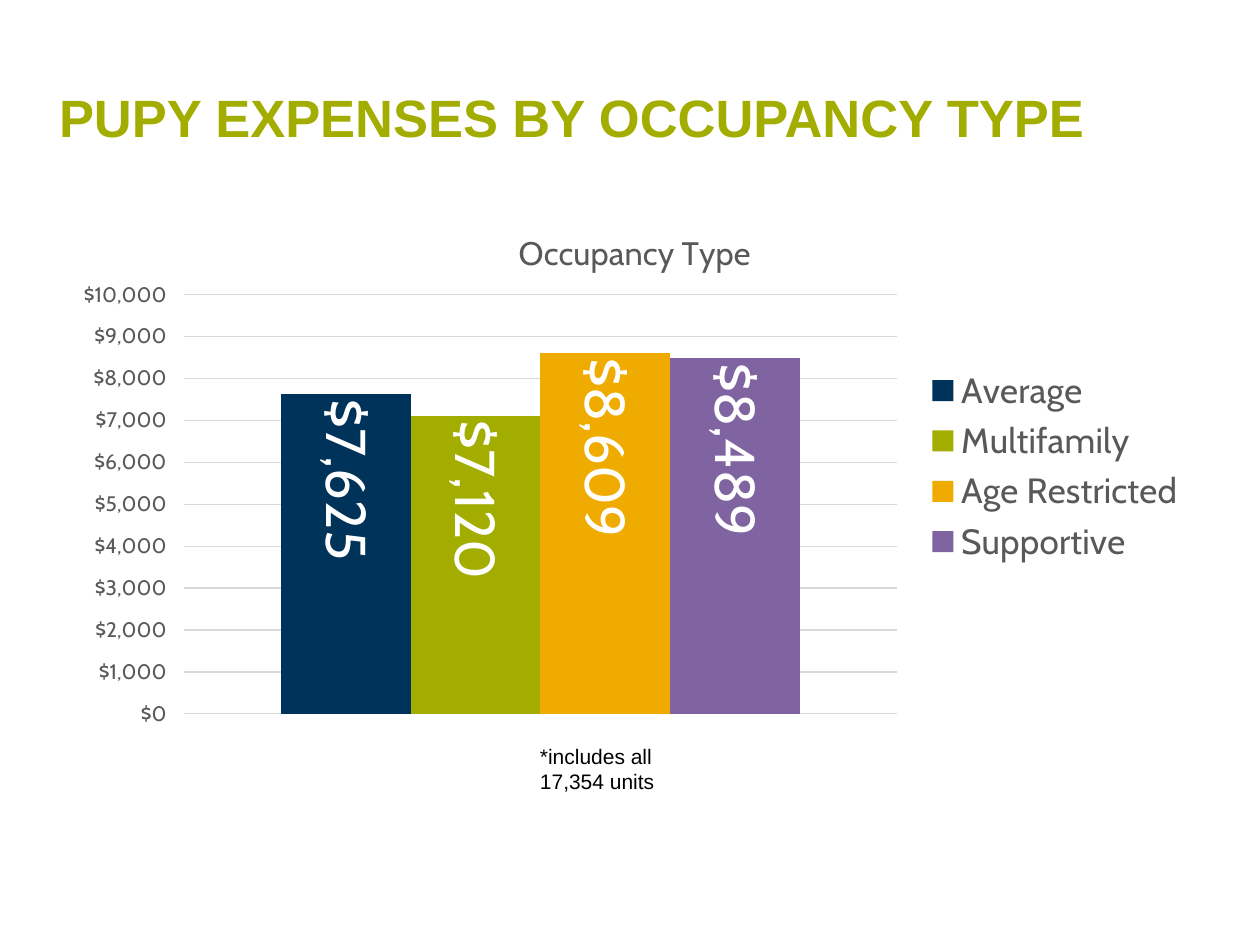
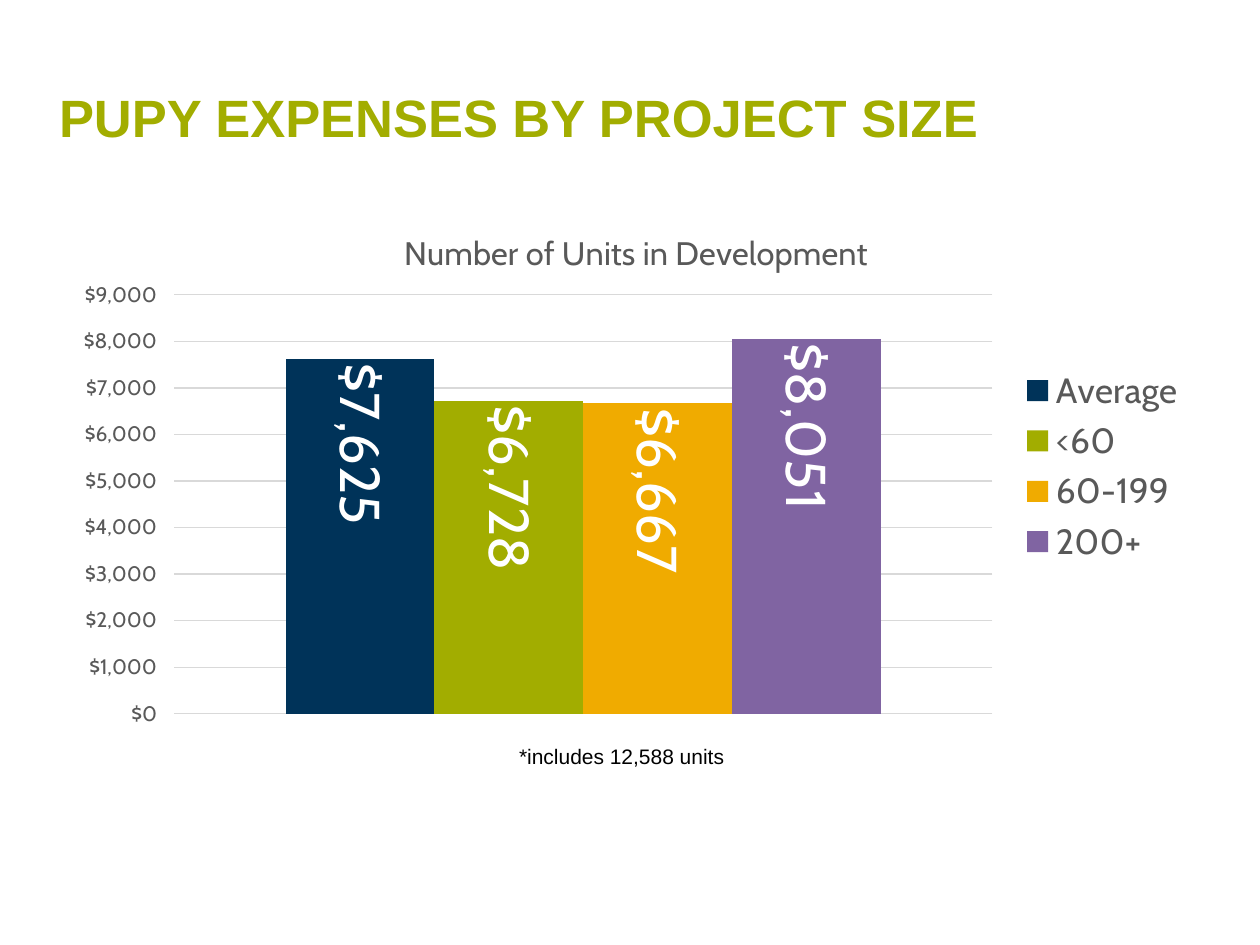
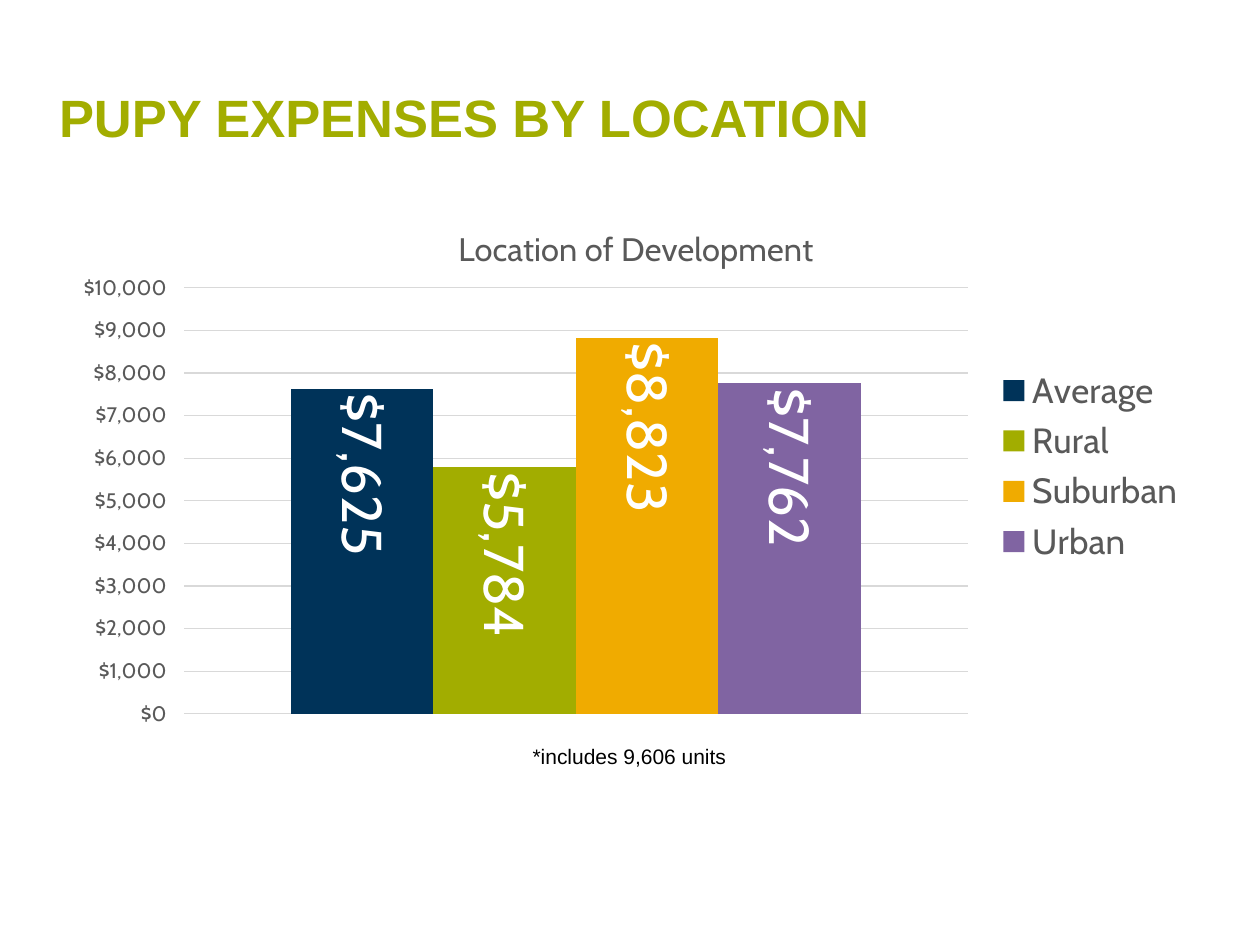
import pptx
import pptx.chart.data
import pptx.dml.color
import pptx.enum.chart
import pptx.enum.text
import pptx.oxml
import pptx.oxml.ns
import pptx.util
from lxml import etree

Pt = pptx.util.Pt
qn = pptx.oxml.ns.qn

GREEN, GRAY, GRID = "A2AD00", "595959", "D9D9D9"
BLACK, WHITE = "000000", "FFFFFF"
SERIES_COLORS = ["003359", GREEN, "F0AB00", "8064A2"]
TEXT_FONT, CHART_FONT = "Arial", "Cabin"
DOLLARS = '"$"#,##0_);[Red]\\("$"#,##0\\)'

# Left, top, width and height in points
TITLE_BOX = (26.64, 21.6, 658.8, 90)
CHART_BOX = (35.28, 111.6, 650.16, 309.6)
PLOT_BOTTOM = 408
NOTE_TOP = 421.2

# heading: left, top; plot: left, top, right; note_box: left, width, height
SLIDES = [
    dict(title="PUPY EXPENSES BY OCCUPANCY TYPE",
         heading="Occupancy Type", heading_at=(293, 128),
         values={"Average": 7625, "Multifamily": 7120,
                 "Age Restricted": 8609, "Supportive": 8489},
         axis_max=10000, plot=(105, 168.5, 512.5),
         note="*includes all 17,354 units", note_box=(301.5, 108, 36)),
    dict(title="PUPY EXPENSES BY PROJECT SIZE",
         heading="Number of Units in Development", heading_at=(227.5, 128),
         values={"Average": 7625, "<60": 6728, "60-199": 6667, "200+": 8051},
         axis_max=9000, plot=(99.5, 168.5, 567),
         note="*includes 12,588 units", note_box=(289.5, 132, 21.6)),
    dict(title="PUPY EXPENSES BY LOCATION",
         heading="Location of Development", heading_at=(258.5, 126),
         values={"Average": 7625, "Rural": 5784, "Suburban": 8823, "Urban": 7762},
         axis_max=10000, plot=(105, 164.5, 553),
         note="*includes 9,606 units", note_box=(297.25, 126, 21.6)),
]


def rgb(color):
    return pptx.dml.color.RGBColor.from_string(color)


def set_font(font, name, size, color, bold=False):
    font.name, font.size, font.bold = name, Pt(size), bold
    font.color.rgb = rgb(color)


def add_text(s, text, box, size, color, bold=False, anchor="TOP"):
    tf = s.shapes.add_textbox(*map(Pt, box)).text_frame
    tf.word_wrap = True
    tf.vertical_anchor = getattr(pptx.enum.text.MSO_ANCHOR, anchor)
    p = tf.paragraphs[0]
    p.text = text
    set_font(p.font, TEXT_FONT, size, color, bold)


def place(element, index, left, top, right=None, bottom=None):
    """Give a chart part a fixed place, from slide coordinates in points."""
    chart_left, chart_top, width, height = CHART_BOX
    fractions = {"x": (left - chart_left) / width, "y": (top - chart_top) / height}
    modes = {"xMode": "edge", "yMode": "edge"}
    if right is not None:
        fractions.update(w=(right - left) / width, h=(bottom - top) / height)
        modes = {"layoutTarget": "inner", **modes}
    for old in element.findall(qn("c:layout")):
        element.remove(old)
    layout = etree.Element(qn("c:layout"))
    manual = etree.SubElement(layout, qn("c:manualLayout"))
    for tag, value in {**modes, **fractions}.items():
        text = value if isinstance(value, str) else f"{value:.4f}"
        etree.SubElement(manual, qn("c:" + tag)).set("val", text)
    element.insert(index, layout)


def add_cost_chart(s, heading, heading_at, values, axis_max, plot_box):
    data = pptx.chart.data.CategoryChartData(number_format=DOLLARS)
    data.categories = ["1"]
    for name, value in values.items():
        data.add_series(name, [value])
    chart = s.shapes.add_chart(pptx.enum.chart.XL_CHART_TYPE.COLUMN_CLUSTERED,
                               *map(Pt, CHART_BOX), data).chart
    set_font(chart.font, CHART_FONT, 10, BLACK)

    p = chart.chart_title.text_frame.paragraphs[0]
    p.text = heading
    set_font(p.font, CHART_FONT, 18.6, GRAY)
    chart.chart_title.include_in_layout = False
    place(chart.chart_title._element, 1, *heading_at)
    left, top, right = plot_box
    place(chart._chartSpace.chart.plotArea, 0, left, top, right, PLOT_BOTTOM)

    chart.has_legend = True
    chart.legend.position = pptx.enum.chart.XL_LEGEND_POSITION.RIGHT
    chart.legend.include_in_layout = False
    set_font(chart.legend.font, CHART_FONT, 20, GRAY)

    chart.category_axis.visible = False
    axis = chart.value_axis
    axis.minimum_scale, axis.maximum_scale, axis.major_unit = 0, axis_max, 1000
    axis.major_tick_mark = pptx.enum.chart.XL_TICK_MARK.OUTSIDE
    axis.format.line.fill.background()
    axis.major_gridlines.format.line.color.rgb = rgb(GRID)
    axis.major_gridlines.format.line.width = Pt(0.75)
    axis.tick_labels.number_format = DOLLARS
    axis.tick_labels.number_format_is_linked = False
    set_font(axis.tick_labels.font, CHART_FONT, 12, GRAY)

    plot = chart.plots[0]
    plot.gap_width, plot.overlap, plot.vary_by_categories = 150, 0, False
    for series, color in zip(plot.series, SERIES_COLORS):
        series.format.fill.solid()
        series.format.fill.fore_color.rgb = rgb(color)
        labels = series.data_labels
        labels.show_value = True
        labels.position = pptx.enum.chart.XL_LABEL_POSITION.INSIDE_END
        labels.number_format = DOLLARS
        labels.number_format_is_linked = False
        set_font(labels.font, CHART_FONT, 32, WHITE)
        body = labels._element.find(qn("c:txPr")).find(qn("a:bodyPr"))
        body.set("rot", "5400000")
        body.set("vert", "horz")


def main():
    prs = pptx.Presentation()
    prs.slide_width, prs.slide_height = Pt(720), Pt(540)
    for page in SLIDES:
        s = prs.slides.add_slide(prs.slide_layouts[6])
        add_text(s, page["title"], TITLE_BOX, 30, GREEN, bold=True, anchor="MIDDLE")
        add_cost_chart(s, page["heading"], page["heading_at"], page["values"],
                       page["axis_max"], page["plot"])
        left, width, height = page["note_box"]
        add_text(s, page["note"], (left, NOTE_TOP, width, height), 12, BLACK)
    prs.save("out.pptx")


if __name__ == "__main__":
    main()
